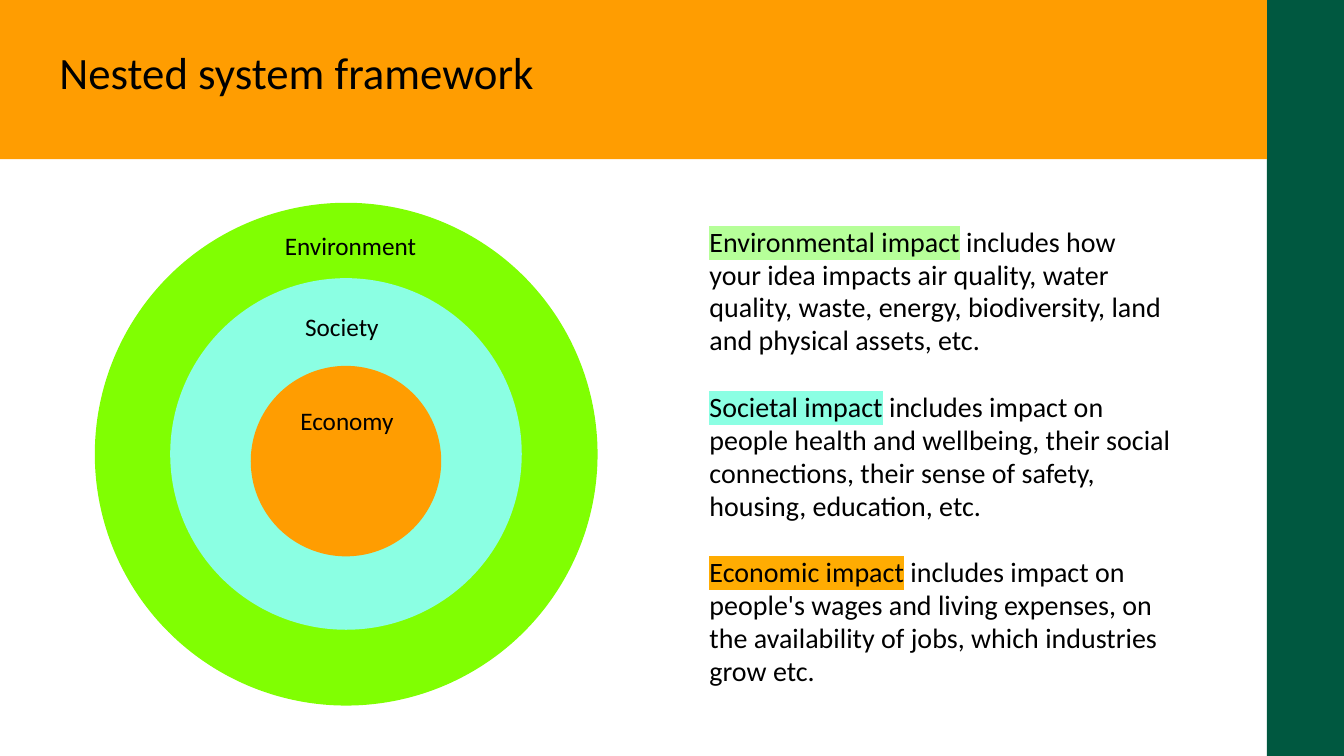
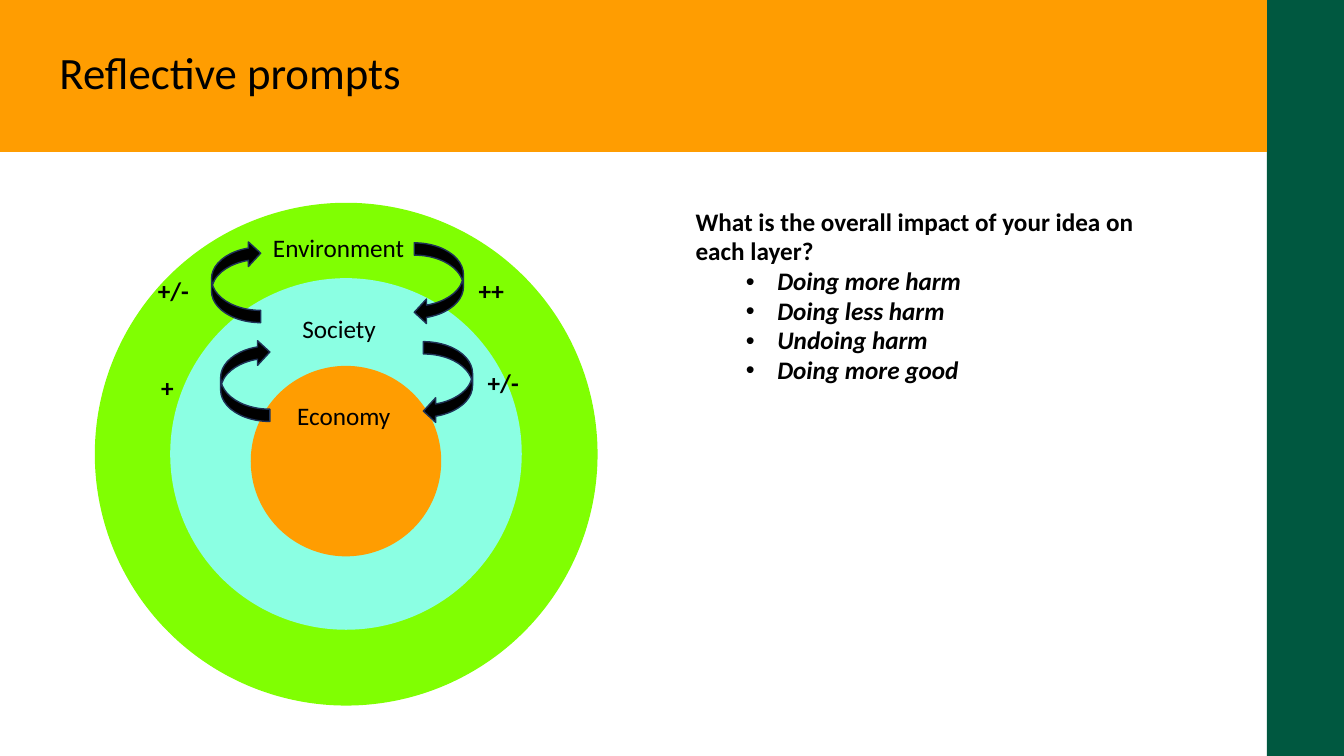
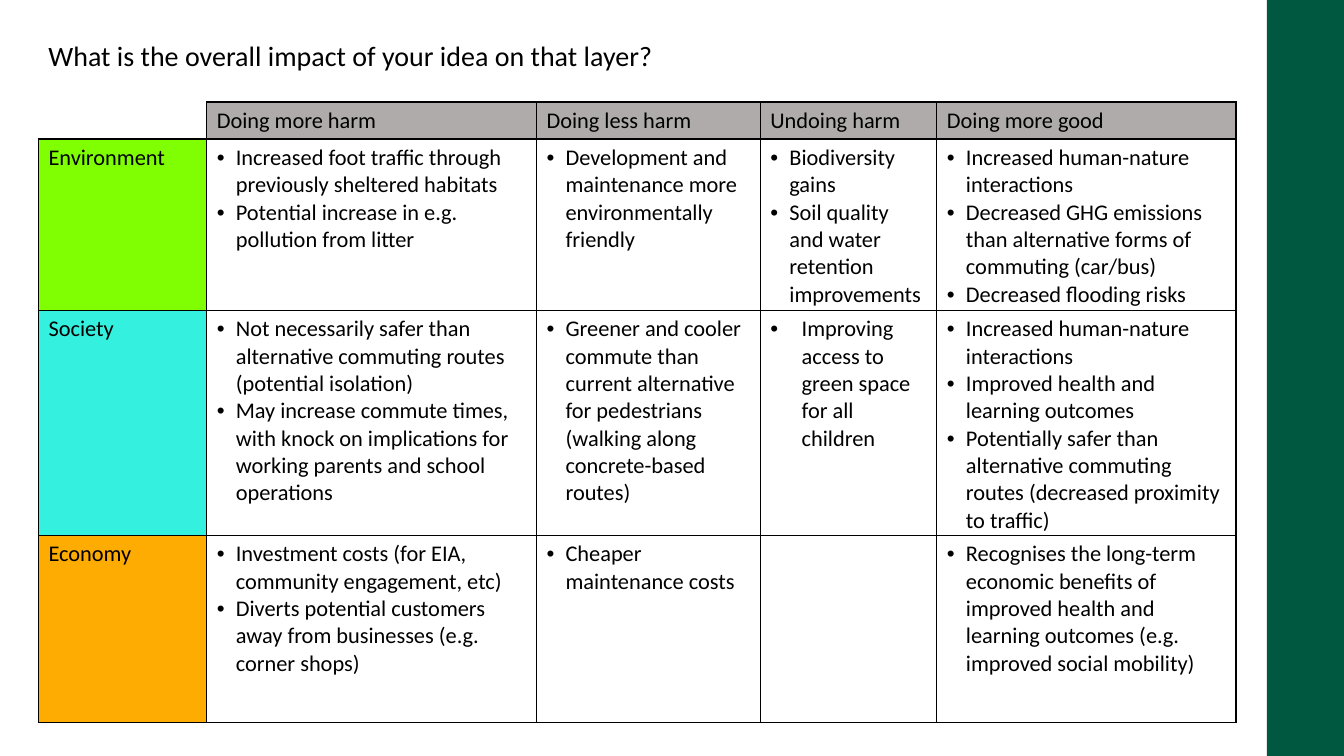
from dataclasses import dataclass

from lxml.etree import SubElement
from pptx import Presentation
from pptx.dml.color import RGBColor
from pptx.enum.shapes import MSO_SHAPE
from pptx.oxml import parse_xml
from pptx.oxml.ns import nsdecls, qn
from pptx.util import Cm, Pt


@dataclass(frozen=True)
class Theme:
    """Colours, font and type sizes of the deck."""
    font: str = "Calibri"
    ink: str = "000000"
    side: str = "005840"
    orange: str = "FF9D01"
    green: str = "80FF02"
    aqua: str = "8BFFE3"
    pale_green: str = "B6FF99"
    amber: str = "FFAC02"
    turquoise: str = "34F0DF"
    grey: str = "AFABAB"
    arrow_line: str = "1E3256"
    title: int = 32
    body: int = 20
    label: int = 18
    cell: int = 16


T = Theme()


class Deck:
    """Holds the presentation, its style and the current slide."""

    def __init__(self):
        """Start an empty widescreen presentation."""
        self.prs = Presentation()
        self.prs.slide_width, self.prs.slide_height = Cm(33.87), Cm(19.05)
        self.s = None

    def slide(self, title=None, band_height=4.01):
        """Add a slide with the side band and an optional title band."""
        self.s = self.prs.slides.add_slide(self.prs.slide_layouts[6])
        self.shape(MSO_SHAPE.RECTANGLE, (31.93, 0, 1.94, 19.05), T.side)
        if title:
            self.shape(MSO_SHAPE.RECTANGLE, (0, 0, 31.93, band_height), T.orange)
            tf = self.text((1.5, 1.12, 28.5, 1.32), inset=0)
            self.run(tf.paragraphs[0], title, T.title)

    def shape(self, kind, box, fill, line=None, rotation=0):
        """Add a filled preset shape."""
        sp = self.s.shapes.add_shape(kind, *map(Cm, box))
        sp.shadow.inherit = False
        sp.rotation = rotation
        sp.fill.solid()
        sp.fill.fore_color.rgb = RGBColor.from_string(fill)
        if line:
            sp.line.color.rgb = RGBColor.from_string(line)
            sp.line.width = Pt(1)
        else:
            sp.line.fill.background()

    def text(self, box, inset=None):
        """Add a wrapping text box and return its frame."""
        tf = self.s.shapes.add_textbox(*map(Cm, box)).text_frame
        tf.word_wrap = True
        if inset is not None:
            for side in ("left", "right", "top", "bottom"):
                setattr(tf, f"margin_{side}", Cm(inset))
        return tf

    def label(self, text, x, y, width=3.76, size=T.label, **fmt):
        """Add a one-line label."""
        tf = self.text((x, y, width, 1.02))
        self.run(tf.paragraphs[0], text, size, **fmt)

    def paragraph(self, tf, **fmt):
        """Return the next paragraph of a frame, formatted."""
        first = tf.paragraphs[0]
        p = tf.add_paragraph() if first.runs else first
        for name, value in fmt.items():
            setattr(p, name, value)
        return p

    def run(self, p, text, size, highlight=None, **fmt):
        """Add a run in the deck font."""
        r = p.add_run()
        r.text = text
        for name, value in {"size": Pt(size), "name": T.font, **fmt}.items():
            setattr(r.font, name, value)
        r.font.color.rgb = RGBColor.from_string(T.ink)
        if highlight:
            r.font._element.find(qn("a:latin")).addprevious(parse_xml(
                f'<a:highlight {nsdecls("a")}><a:srgbClr val="{highlight}"/></a:highlight>'))

    def bullet(self, p, left, hang):
        """Give a paragraph a round bullet and a hanging indent."""
        pPr = p._p.get_or_add_pPr()
        pPr.set("marL", str(Cm(left)))
        pPr.set("indent", str(-Cm(hang)))
        SubElement(pPr, qn("a:buFont")).set("typeface", "Arial")
        SubElement(pPr, qn("a:buChar")).set("char", "•")

    def rings(self, labels):
        """Draw the nested circles and their labels."""
        for x, y, d, fill in ((2.39, 5.11, 12.67, T.green),
                              (4.29, 7.01, 8.86, T.aqua),
                              (6.32, 9.22, 4.8, T.orange)):
            self.shape(MSO_SHAPE.OVAL, (x, y, d, d), fill)
        for text, x, y, width in labels:
            self.label(text, x, y, width)

    def cell(self, cell, items, fill=None, sides="LRTB", indent=None):
        """Fill a table cell with text, colour and borders."""
        for text in items:
            p = self.paragraph(cell.text_frame)
            if indent:
                self.bullet(p, indent, indent)
            self.run(p, text, T.cell)
        if not items:
            p = cell.text_frame.paragraphs[0]
            SubElement(p._p, qn("a:endParaRPr")).set("sz", str(T.cell * 100))
        if fill:
            cell.fill.solid()
            cell.fill.fore_color.rgb = RGBColor.from_string(fill)
        else:
            cell.fill.background()
        tcPr = cell._tc.get_or_add_tcPr()
        for i, side in enumerate(sides):
            tcPr.insert(i, parse_xml(
                f'<a:ln{side} {nsdecls("a")} w="{Pt(1)}"><a:solidFill>'
                f'<a:srgbClr val="{T.ink}"/></a:solidFill></a:ln{side}>'))

    def table(self, x, y, widths, heights, header, rows):
        """Add a matrix with coloured row labels and bulleted cells."""
        tbl = self.s.shapes.add_table(len(heights), len(widths), Cm(x), Cm(y),
                                      Cm(sum(widths)), Cm(sum(heights))).table
        tbl.first_row = tbl.horz_banding = False
        for col, width in zip(tbl.columns, widths):
            col.width = Cm(width)
        for row, height in zip(tbl.rows, heights):
            row.height = Cm(height)
        self.cell(tbl.cell(0, 0), [], sides="RB")
        for c, text in enumerate(header, 1):
            self.cell(tbl.cell(0, c), [text], T.grey)
        for r, (name, fill, cells) in enumerate(rows, 1):
            self.cell(tbl.cell(r, 0), [name], fill)
            for c, items in enumerate(cells, 1):
                indent = 0.79 if (r, c) == (2, 3) else 0.48
                self.cell(tbl.cell(r, c), items, indent=indent)


LEVELS = ("Doing more harm", "Doing less harm", "Undoing harm", "Doing more good")

IMPACTS = (
    ("Environmental impact", T.pale_green,
     " includes how your idea impacts air quality, water quality, waste, energy, "
     "biodiversity, land and physical assets, etc."),
    ("Societal impact", T.aqua,
     " includes impact on people health and wellbeing, their social connections, "
     "their sense of safety, housing, education, etc."),
    ("Economic impact", T.amber,
     " includes impact on people's wages and living expenses, on the availability "
     "of jobs, which industries grow etc."),
)

MATRIX = (
    ("Environment", T.green, (
        ["Increased foot traffic through previously sheltered habitats",
         "Potential increase in e.g. pollution from litter"],
        ["Development and maintenance more environmentally friendly"],
        ["Biodiversity gains", "Soil quality and water retention improvements"],
        ["Increased human-nature interactions",
         "Decreased GHG emissions than alternative forms of commuting (car/bus)",
         "Decreased flooding risks"])),
    ("Society", T.turquoise, (
        ["Not necessarily safer than alternative commuting routes (potential isolation)",
         "May increase commute times, with knock on implications for working parents "
         "and school operations"],
        ["Greener and cooler commute than current alternative for pedestrians "
         "(walking along concrete-based routes)"],
        ["Improving access to green space for all children"],
        ["Increased human-nature interactions",
         "Improved health and learning outcomes",
         "Potentially safer than alternative commuting routes "
         "(decreased proximity to traffic)"])),
    ("Economy", T.amber, (
        ["Investment costs (for EIA, community engagement, etc)",
         "Diverts potential customers away from businesses (e.g. corner shops)"],
        ["Cheaper maintenance costs"],
        [],
        ["Recognises the long-term economic benefits of improved health and learning "
         "outcomes (e.g. improved social mobility)"])),
)


def framework(deck):
    """Build the nested system slide."""
    deck.slide("Nested system framework")
    deck.rings((("Economy", 7.32, 10.08, 3.76), ("Society", 7.44, 7.72, 3.76),
                ("Environment", 6.93, 5.69, 4.75)))
    tf = deck.text((17.88, 5.69, 11.68, 12.67), inset=0)
    for i, (term, colour, rest) in enumerate(IMPACTS):
        p = deck.paragraph(tf, line_spacing=0.98)
        if i:
            p.space_before = Pt(24)
        deck.run(p, term, T.body, colour)
        deck.run(p, rest, T.body)


def prompts(deck):
    """Build the reflective prompts slide."""
    deck.slide("Reflective prompts", 3.83)
    tf = deck.text((17.53, 5.23, 11.68, 12.67), inset=0)
    p = deck.paragraph(tf, line_spacing=0.98)
    deck.run(p, "What is the overall impact of your idea on each layer?", T.label, bold=True)
    for level in LEVELS:
        p = deck.paragraph(tf, level=1, line_spacing=0.98)
        deck.bullet(p, 2.06, 0.79)
        deck.run(p, level, T.label, bold=True, italic=True)
    deck.rings((("Economy", 7.24, 9.96, 3.76), ("Society", 7.37, 7.77, 3.76),
                ("Environment", 6.63, 5.74, 4.75)))
    for sign, x, y in (("++", 11.81, 6.81), ("+/-", 12.04, 9.12),
                       ("+/-", 3.73, 6.81), ("+", 3.81, 9.25)):
        deck.label(sign, x, y, bold=True)
    for x, y, rotation in ((5.56, 8.56, 180), (5.33, 6.07, 180),
                           (10.67, 8.61, 0), (10.44, 6.12, 0)):
        deck.shape(MSO_SHAPE.CURVED_LEFT_ARROW, (x, y, 1.24, 2.06), T.ink,
                   T.arrow_line, rotation)


def matrix(deck):
    """Build the impact table slide."""
    deck.slide()
    deck.table(0.97, 2.57, (4.24, 8.31, 5.64, 4.45, 7.54), (0.91, 4.19, 5.51, 4.72),
               LEVELS, MATRIX)
    deck.label("What is the overall impact of your idea on that layer?",
               0.97, 0.84, 30.18, T.body)


def main():
    """Build and save the deck."""
    deck = Deck()
    for build in (framework, prompts, matrix):
        build(deck)
    deck.prs.save("out.pptx")


if __name__ == "__main__":
    main()
